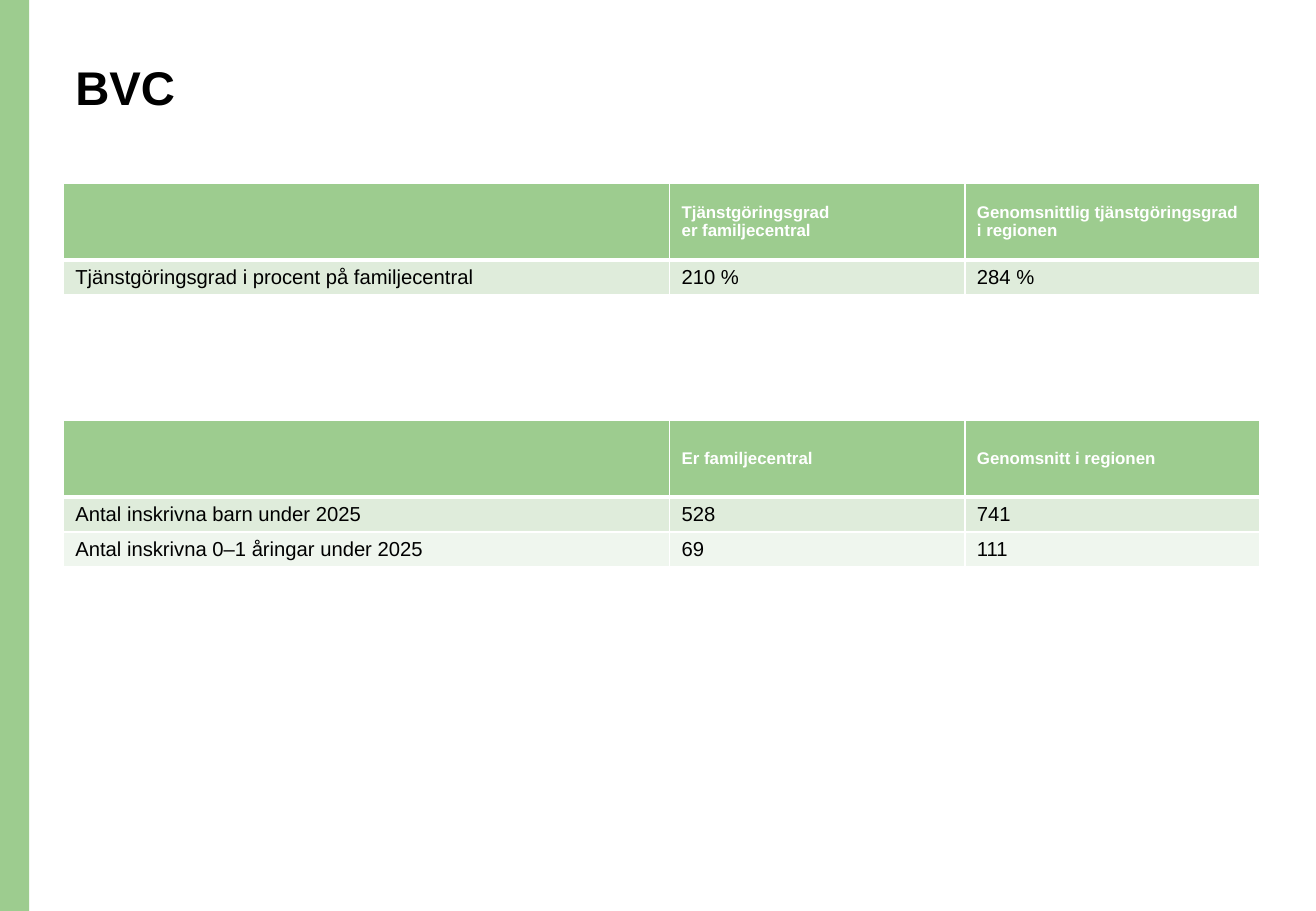
from dataclasses import dataclass

from lxml.etree import SubElement
from pptx import Presentation
from pptx.dml.color import RGBColor
from pptx.enum.shapes import MSO_SHAPE
from pptx.enum.text import MSO_ANCHOR, PP_ALIGN
from pptx.oxml.ns import qn
from pptx.slide import Slide
from pptx.table import _Cell as Cell
from pptx.text.text import TextFrame
from pptx.util import Inches, Pt


@dataclass(frozen=True)
class TextStyle:
    size: float
    color: str
    bold: bool


@dataclass(frozen=True)
class Theme:
    font: str = "Arial"
    green: str = "9DCC8F"
    bands: tuple[str, ...] = ("DFECDB", "EFF6EE")
    rule: str = "FFFFFF"
    thin: float = 1
    thick: float = 3
    title: TextStyle = TextStyle(28, "000000", True)
    header: TextStyle = TextStyle(10, "FFFFFF", True)
    body: TextStyle = TextStyle(12, "000000", False)


@dataclass(frozen=True)
class ComparisonTable:
    top: float
    rows: tuple[tuple[str, ...], ...]


THEME = Theme()
SLIDE_WIDTH, SLIDE_HEIGHT = 10.83, 7.5
BAR_WIDTH = 0.24
CONTENT_LEFT = 0.52
COLUMN_WIDTHS = (4.99, 2.43, 2.43)
HEADER_HEIGHT, ROW_HEIGHT = 0.63, 0.29

COMPARISONS = (
    ComparisonTable(1.51, (
        ("", "Tjänstgöringsgrad\ner familjecentral",
         "Genomsnittlig tjänstgöringsgrad\ni regionen"),
        ("Tjänstgöringsgrad i procent på familjecentral", "210 %", "284 %"),
    )),
    ComparisonTable(3.46, (
        ("", "Er familjecentral", "Genomsnitt i regionen"),
        ("Antal inskrivna barn under 2025", "528", "741"),
        ("Antal inskrivna 0–1 åringar under 2025", "69", "111"),
    )),
)


def write_text(frame: TextFrame, text: str, style: TextStyle) -> None:
    frame.text = text
    font_format = {"name": THEME.font, "size": Pt(style.size), "bold": style.bold}
    for paragraph in frame.paragraphs:
        paragraph.alignment = PP_ALIGN.LEFT
        for attribute, value in font_format.items():
            setattr(paragraph.font, attribute, value)
        paragraph.font.color.rgb = RGBColor.from_string(style.color)


def set_borders(cell: Cell, top: float, bottom: float) -> None:
    """Rule all four sides; the border elements must precede the cell fill."""
    properties = cell._tc.get_or_add_tcPr()
    widths = {"L": THEME.thin, "R": THEME.thin, "T": top, "B": bottom}
    for position, (side, width) in enumerate(widths.items()):
        line = SubElement(properties, qn(f"a:ln{side}"), w=str(Pt(width)))
        color = SubElement(SubElement(line, qn("a:solidFill")), qn("a:srgbClr"))
        color.set("val", THEME.rule)
        properties.insert(position, line)


def format_cell(cell: Cell, text: str, row: int) -> None:
    is_header = row == 0
    write_text(cell.text_frame, text, THEME.header if is_header else THEME.body)
    cell.vertical_anchor = MSO_ANCHOR.MIDDLE
    fill = THEME.green if is_header else THEME.bands[(row - 1) % len(THEME.bands)]
    cell.fill.solid()
    cell.fill.fore_color.rgb = RGBColor.from_string(fill)
    set_borders(cell,
                top=THEME.thick if row == 1 else THEME.thin,
                bottom=THEME.thick if is_header else THEME.thin)


def add_comparison(slide: Slide, comparison: ComparisonTable) -> None:
    heights = [HEADER_HEIGHT] + [ROW_HEIGHT] * (len(comparison.rows) - 1)
    table = slide.shapes.add_table(
        len(heights), len(COLUMN_WIDTHS), Inches(CONTENT_LEFT),
        Inches(comparison.top), Inches(sum(COLUMN_WIDTHS)), Inches(sum(heights)),
    ).table
    for column, width in zip(table.columns, COLUMN_WIDTHS):
        column.width = Inches(width)
    for row, (height, texts) in enumerate(zip(heights, comparison.rows)):
        table.rows[row].height = Inches(height)
        for column, text in enumerate(texts):
            format_cell(table.cell(row, column), text, row)


def add_side_bar(slide: Slide) -> None:
    bar = slide.shapes.add_shape(MSO_SHAPE.RECTANGLE, 0, 0,
                                 Inches(BAR_WIDTH), Inches(SLIDE_HEIGHT))
    bar.shadow.inherit = False
    bar.fill.solid()
    bar.fill.fore_color.rgb = RGBColor.from_string(THEME.green)
    bar.line.fill.background()


def set_title(slide: Slide, text: str) -> None:
    title = slide.shapes.title
    placement = {"left": CONTENT_LEFT, "top": 0.48, "width": 9.34, "height": 1.02}
    for attribute, value in placement.items():
        setattr(title, attribute, Inches(value))
    write_text(title.text_frame, text, THEME.title)
    title.text_frame.vertical_anchor = MSO_ANCHOR.TOP
    title.text_frame.paragraphs[0].line_spacing = 0.9


def main() -> None:
    presentation = Presentation()
    presentation.slide_width = Inches(SLIDE_WIDTH)
    presentation.slide_height = Inches(SLIDE_HEIGHT)
    title_only = presentation.slide_layouts.get_by_name("Title Only")
    slide = presentation.slides.add_slide(title_only)
    add_side_bar(slide)
    set_title(slide, "BVC")
    for comparison in COMPARISONS:
        add_comparison(slide, comparison)
    presentation.save("out.pptx")


if __name__ == "__main__":
    main()
